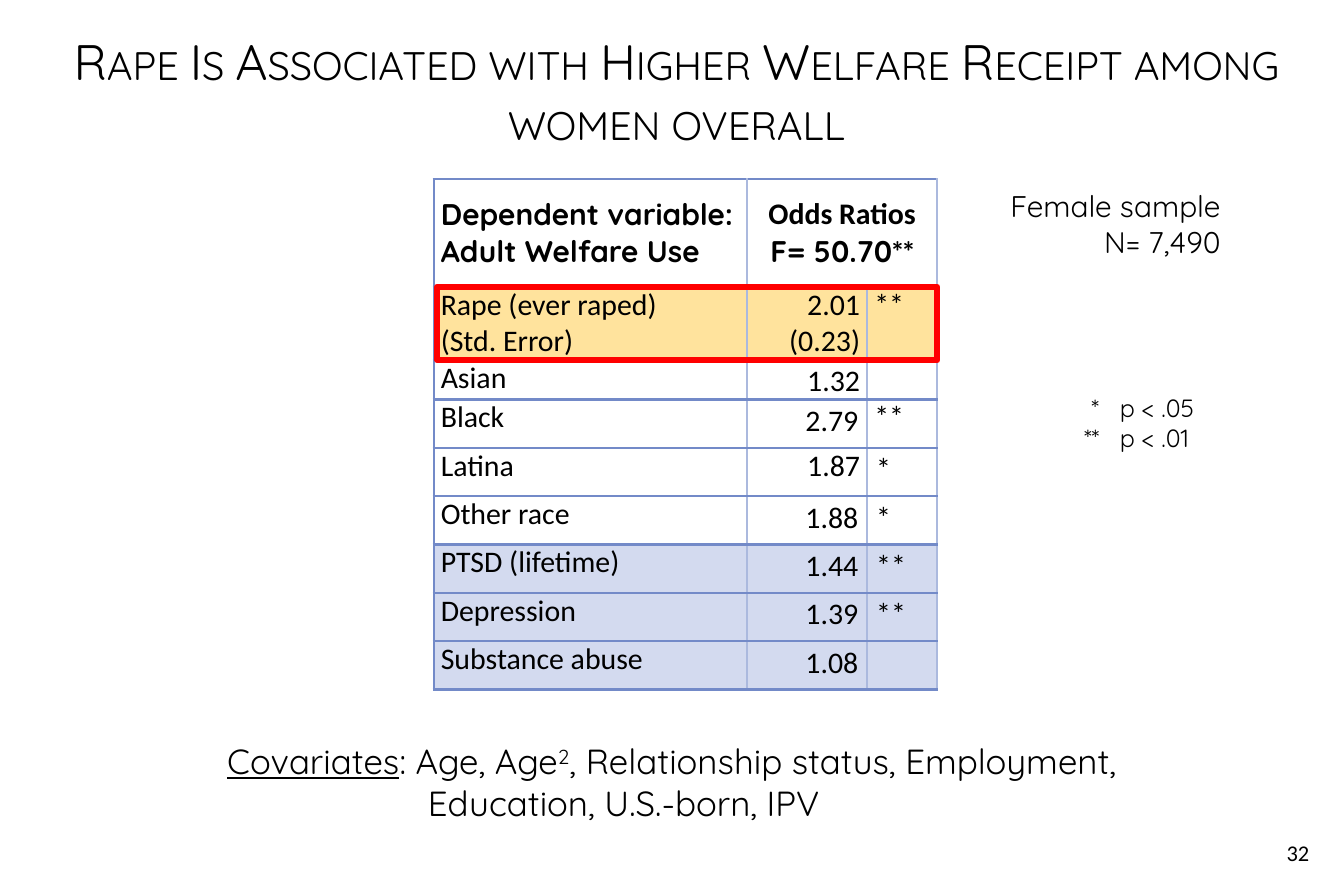
"""Build the slide on rape and welfare receipt among women."""
from dataclasses import dataclass

from pptx import Presentation
from pptx.dml.color import RGBColor
from pptx.enum.shapes import MSO_SHAPE
from pptx.enum.text import MSO_ANCHOR as Anchor, MSO_AUTO_SIZE as AutoSize, PP_ALIGN as Align
from pptx.oxml.xmlchemy import OxmlElement
from pptx.util import Inches, Pt


@dataclass(frozen=True)
class Theme:
    """Fonts, colours and type sizes of the slide."""
    display: str = "Quicksand"
    plain: str = "Calibri"
    ink: str = "000000"
    paper: str = "FFFFFF"
    focus: str = "FFE39D"
    health: str = "D3DAEF"
    rule: str = "738AC8"
    divider: str = "ABB9DE"
    alert: str = "FF0000"
    title: int = 20
    covariates: int = 14
    body: int = 12
    legend: int = 10
    page: int = 9


THEME = Theme()
FLUSH, PADDED = (0.04, 0), (0.05, 0.02)


@dataclass(frozen=True)
class Result:
    """One table row: labels, odds ratios, significance and cell insets."""
    labels: tuple
    ratios: tuple
    stars: str = ""
    fill: str = THEME.paper
    ratio_inset: tuple = PADDED
    star_inset: tuple = PADDED
    ratio_anchor: Anchor = Anchor.TOP


RESULTS = [
    Result(("Rape (ever raped)", "(Std. Error)"), ("2.01", "(0.23)"), "**", THEME.focus, FLUSH, FLUSH),
    Result(("Asian",), ("1.32",), ratio_inset=FLUSH, star_inset=FLUSH, ratio_anchor=Anchor.BOTTOM),
    Result(("Black",), ("2.79",), "**", star_inset=FLUSH),
    Result(("Latina",), ("1.87",), "*", ratio_inset=FLUSH),
    Result(("Other race",), ("1.88",), "*"),
    Result(("PTSD (lifetime)",), ("1.44",), "**", THEME.health),
    Result(("Depression",), ("1.39",), "**", THEME.health),
    Result(("Substance abuse",), ("1.08",), fill=THEME.health),
]
COLUMN_WIDTHS = [1.75, 0.67, 0.39]
ROW_HEIGHTS = [0.6, 0.41, 0.22] + [0.27] * 6


def rgb(colour):
    """Turn a hex string into a colour."""
    return RGBColor.from_string(colour)


def add_run(paragraph, text, size, font=THEME.display, bold=False):
    """Append a formatted run and return it."""
    run = paragraph.add_run()
    run.text = text
    run.font.size, run.font.name, run.font.bold = Pt(size), font, bold
    run.font.color.rgb = rgb(THEME.ink)
    return run


def add_lines(frame, lines, size, font=THEME.display, align=Align.LEFT, bold=False):
    """Write one paragraph for each line of text."""
    for index, line in enumerate(lines):
        paragraph = frame.add_paragraph() if index else frame.paragraphs[0]
        paragraph.alignment = align
        add_run(paragraph, line, size, font, bold)


def set_insets(frame, across, down):
    """Set equal side insets and equal top and bottom insets."""
    frame.margin_left = frame.margin_right = Inches(across)
    frame.margin_top = frame.margin_bottom = Inches(down)


def set_indent(paragraph, left, first):
    """Set the left margin and first-line indent of a paragraph."""
    properties = paragraph._p.get_or_add_pPr()
    properties.set("marL", str(Inches(left)))
    properties.set("indent", str(Inches(first)))


def add_text_box(slide, box, insets):
    """Add an empty text box and return its text frame."""
    frame = slide.shapes.add_textbox(*map(Inches, box)).text_frame
    frame.word_wrap = True
    set_insets(frame, *insets)
    return frame


def add_title(slide):
    """Fill the title placeholder with small capitals."""
    title = slide.shapes.title
    title.left, title.top, title.width, title.height = map(Inches, (0.33, 0.17, 6.86, 0.67))
    frame = title.text_frame
    frame.auto_size, frame.vertical_anchor = AutoSize.NONE, Anchor.MIDDLE
    set_insets(frame, 0.03, 0.03)
    frame.paragraphs[0].alignment = Align.CENTER
    set_indent(frame.paragraphs[0], 0.03, 0)
    heading = "Rape Is Associated with Higher Welfare Receipt among women overall"
    run = add_run(frame.paragraphs[0], heading, THEME.title)
    run.font._element.set("cap", "small")


def add_border(cell, side, colour):
    """Draw one edge of a table cell."""
    edge = OxmlElement(f"a:ln{side}")
    edge.set("w", str(Pt(1)))
    fill, value = OxmlElement("a:solidFill"), OxmlElement("a:srgbClr")
    value.set("val", colour)
    fill.append(value)
    edge.append(fill)
    cell._tc.get_or_add_tcPr().append(edge)


def style_cell(cell, fill, inset=FLUSH, anchor=Anchor.TOP, left_edge=THEME.divider):
    """Set the borders, fill, insets and anchor of a cell."""
    for side, colour in zip("LRTB", (left_edge, THEME.divider, THEME.rule, THEME.rule)):
        add_border(cell, side, colour)
    cell.fill.solid()
    cell.fill.fore_color.rgb = rgb(fill)
    set_insets(cell, *inset)
    cell.vertical_anchor = anchor


def fill_header(table):
    """Write the header row with its merged odds-ratio heading."""
    for column in range(len(COLUMN_WIDTHS)):
        edge = THEME.divider if column else THEME.rule
        style_cell(table.cell(0, column), THEME.paper, anchor=Anchor.MIDDLE, left_edge=edge)
    table.cell(0, 1).merge(table.cell(0, 2))
    outcome, odds = table.cell(0, 0).text_frame, table.cell(0, 1).text_frame
    add_lines(outcome, ["Dependent variable: Adult Welfare Use"], THEME.body, bold=True)
    add_lines(odds, ["Odds Ratios"], THEME.body, THEME.plain, Align.CENTER, bold=True)
    statistic = odds.add_paragraph()
    statistic.alignment = Align.CENTER
    add_run(statistic, "F= 50.70**", THEME.body, bold=True)


def fill_result(cells, result):
    """Write one result row."""
    label, ratio, stars = cells
    style_cell(label, result.fill, left_edge=THEME.rule)
    style_cell(ratio, result.fill, result.ratio_inset, result.ratio_anchor)
    style_cell(stars, result.fill, result.star_inset)
    add_lines(label.text_frame, result.labels, THEME.body, THEME.plain)
    add_lines(ratio.text_frame, result.ratios, THEME.body, THEME.plain, Align.RIGHT)
    if result.stars:
        add_lines(stars.text_frame, [result.stars], THEME.body, THEME.plain)
    else:
        ending = OxmlElement("a:endParaRPr")
        ending.set("sz", str(THEME.body * 100))
        stars.text_frame.paragraphs[0]._p.append(ending)


def add_results_table(slide):
    """Add the table of odds ratios."""
    box = (2.42, 1, sum(COLUMN_WIDTHS), sum(ROW_HEIGHTS))
    table = slide.shapes.add_table(len(ROW_HEIGHTS), len(COLUMN_WIDTHS), *map(Inches, box)).table
    table.first_row = table.horz_banding = False
    for column, width in zip(table.columns, COLUMN_WIDTHS):
        column.width = Inches(width)
    for row, height in zip(table.rows, ROW_HEIGHTS):
        row.height = Inches(height)
    fill_header(table)
    for index, result in enumerate(RESULTS, start=1):
        fill_result(table.rows[index].cells, result)


def add_highlight(slide):
    """Outline the key result row."""
    outline = slide.shapes.add_shape(MSO_SHAPE.RECTANGLE, *map(Inches, (2.44, 1.6, 2.79, 0.41)))
    outline.shadow.inherit = False
    outline.fill.background()
    outline.line.color.rgb, outline.line.width = rgb(THEME.alert), Pt(2.5)


def add_covariates(slide):
    """List the covariates with a hanging indent."""
    paragraph = add_text_box(slide, (1.17, 4.08, 5.17, 0.57), (0.1, 0.05)).paragraphs[0]
    set_indent(paragraph, 1.12, -1.12)
    add_run(paragraph, "Covariates", THEME.covariates).font.underline = True
    add_run(paragraph, ": Age, Age", THEME.covariates)
    add_run(paragraph, "2", THEME.covariates).font._element.set("baseline", "30000")
    others = ", Relationship status, Employment, Education, U.S.-born, IPV"
    add_run(paragraph, others, THEME.covariates)


def add_legend(slide):
    """Explain the significance stars."""
    frame = add_text_box(slide, (6, 2.16, 1, 0.56), (0.05, 0.03))
    add_lines(frame, ["*\tp < .05", "**\tp < .01"], THEME.legend)
    for paragraph, hang in zip(frame.paragraphs, (0.16, 0.2)):
        set_indent(paragraph, 0.2, -hang)


def main():
    """Build and save the slide."""
    deck = Presentation()
    deck.slide_width, deck.slide_height = Inches(7.5), Inches(5)
    slide = deck.slides.add_slide(deck.slide_layouts[5])
    add_title(slide)
    page = add_text_box(slide, (7.13, 4.65, 0.3, 0.19), (0.05, 0.03))
    add_lines(page, ["32"], THEME.page, THEME.plain)
    add_results_table(slide)
    add_highlight(slide)
    add_covariates(slide)
    add_legend(slide)
    sample = add_text_box(slide, (5.33, 1, 1.58, 0.5), (0.1, 0.05))
    add_lines(sample, ["Female sample", "N= 7,490"], THEME.body, align=Align.RIGHT)
    deck.save("out.pptx")


if __name__ == "__main__":
    main()
